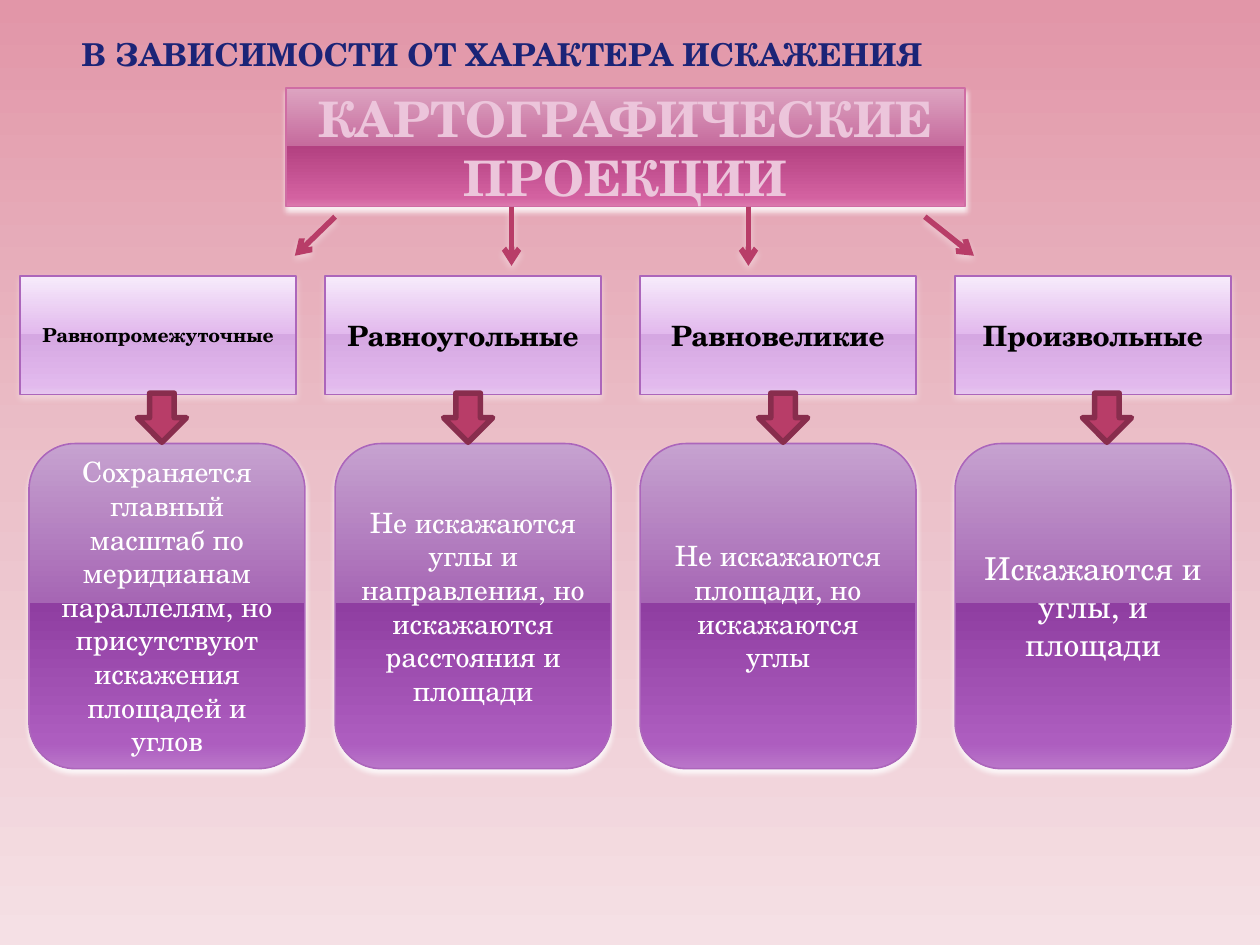
from dataclasses import dataclass

from lxml import etree
from pptx import Presentation
from pptx import util as u
from pptx.dml.color import RGBColor
from pptx.enum import shapes, text
from pptx.oxml import parse_xml
from pptx.oxml.ns import nsdecls, qn


@dataclass(frozen=True)
class Theme:
    """Colours, gradients and type sizes of the slide."""
    font: str = "TeX Gyre Schola"
    navy: str = "1B2477"
    rose: str = "ECC5DB"
    black: str = "000000"
    white: str = "FFFFFF"
    red: str = "B83D68"
    wine: str = "882D4D"
    pink: str = "CF6DA4"
    lilac: str = "AC66BB"
    back: tuple = ("E296A8", "EBC0C9", "F5E0E5")
    head: tuple = ("DDA4C1", "C66B9D", "B34181", "D361A0", "DC79AE")
    pale: tuple = ("F7EBFB", "E2B9ED", "D5A7E2", "E2B9ED", "E6C6EF")
    deep: tuple = ("C6A2D0", "A666B4", "8F3EA1", "AD5DBF", "BA76CA")
    big: int = 28
    large: int = 18
    mid: int = 16
    small: int = 11
    thin: float = 0.9
    thick: float = 3.15
    soft: tuple = (38, 4)
    firm: tuple = (83, 3.1)


class Deck:
    """Draws styled elements on the current slide."""

    def __init__(self, theme):
        self.look = theme
        self.prs = Presentation()
        self.prs.slide_width, self.prs.slide_height = u.Inches(10), u.Inches(7.5)
        self.slide = self.prs.slides.add_slide(self.prs.slide_layouts[5])
        self.blend(self.slide.background.fill, self.slide.element, theme.back, (0, 50, 100))

    def blend(self, fill, root, tints, stops=(0, 49, 49, 92, 100)):
        """Fill from top to bottom with the given tints."""
        fill.gradient()
        fill.gradient_angle = 270
        band = root.xpath(".//a:gsLst")[0]
        for old in list(band):
            band.remove(old)
        for tint, stop in zip(tints, stops):
            part = etree.SubElement(band, qn("a:gs"), pos=str(stop * 1000))
            etree.SubElement(part, qn("a:srgbClr"), val=tint)

    def edge(self, item, tint, width):
        """Set the line colour and width."""
        item.line.color.rgb = RGBColor.from_string(tint)
        item.line.width = u.Pt(width)

    def glow(self, item, alpha, blur):
        """Put a light shadow below the item."""
        item.element.spPr.append(parse_xml(
            f'<a:effectLst {nsdecls("a")}><a:outerShdw blurRad="{u.Pt(blur)}" '
            f'dist="{u.Pt(2)}" dir="5400000" rotWithShape="0">'
            f'<a:srgbClr val="{self.look.white}"><a:alpha val="{alpha * 1000}"/>'
            '</a:srgbClr></a:outerShdw></a:effectLst>'))

    def place(self, item, box):
        """Move and size the item."""
        item.left, item.top, item.width, item.height = map(u.Inches, box)

    def letter(self, item, words, size, tint, bold=True, align=text.PP_ALIGN.CENTER):
        """Set the text and its style."""
        frame = item.text_frame
        frame.text = words
        frame.word_wrap = True
        para = frame.paragraphs[0]
        para.alignment = align
        font = para.font
        font.name, font.size, font.bold = self.look.font, u.Pt(size), bold
        font.color.rgb = RGBColor.from_string(tint)
        return frame

    def title(self, words, box):
        """Format the title placeholder as a banner."""
        item = self.slide.shapes.title
        self.place(item, box)
        self.blend(item.fill, item.element, self.look.head)
        self.edge(item, self.look.pink, self.look.thin)
        self.glow(item, *self.look.firm)
        frame = self.letter(item, words, self.look.big, self.look.rose)
        frame.auto_size = text.MSO_AUTO_SIZE.NONE
        frame.vertical_anchor = text.MSO_ANCHOR.BOTTOM
        frame.margin_left = frame.margin_right = u.Inches(0.05)
        frame.margin_top = frame.margin_bottom = 0

    def label(self, words, box):
        """Add a line of plain text."""
        item = self.slide.shapes.add_textbox(*map(u.Inches, box))
        self.letter(item, words, self.look.large, self.look.navy, align=text.PP_ALIGN.LEFT)

    def card(self, kind, words, box, tints, shade, size, tint, bold):
        """Add a gradient box with centred text."""
        item = self.slide.shapes.add_shape(kind, *map(u.Inches, box))
        self.blend(item.fill, item.element, tints)
        self.edge(item, self.look.lilac, self.look.thin)
        self.glow(item, *shade)
        frame = self.letter(item, words, size, tint, bold)
        frame.vertical_anchor = text.MSO_ANCHOR.MIDDLE

    def link(self, start, end):
        """Add a line with an arrowhead."""
        item = self.slide.shapes.add_connector(
            shapes.MSO_CONNECTOR.STRAIGHT, *map(u.Inches, start + end))
        self.edge(item, self.look.red, self.look.thick)
        etree.SubElement(item.element.spPr.find(qn("a:ln")), qn("a:tailEnd"), type="arrow")
        self.glow(item, *self.look.soft)

    def arrow(self, left, top, side):
        """Add a block arrow pointing down."""
        item = self.slide.shapes.add_shape(
            shapes.MSO_SHAPE.DOWN_ARROW, *map(u.Inches, (left, top, side, side)))
        item.fill.solid()
        item.fill.fore_color.rgb = RGBColor.from_string(self.look.red)
        self.edge(item, self.look.wine, self.look.thick)
        item.shadow.inherit = False


def main():
    """Build and save the slide."""
    look = Theme()
    deck = Deck(look)
    deck.title("КАРТОГРАФИЧЕСКИЕ ПРОЕКЦИИ", (2.27, 0.7, 5.39, 0.94))
    deck.label("В ЗАВИСИМОСТИ ОТ ХАРАКТЕРА ИСКАЖЕНИЯ", (0.55, 0.23, 7.03, 0.4))

    kinds = (
        (0.16, "Равнопромежуточные", look.small),
        (2.58, "Равноугольные", look.mid),
        (5.08, "Равновеликие", look.mid),
        (7.58, "Произвольные", look.mid),
    )
    for left, name, size in kinds:
        deck.card(shapes.MSO_SHAPE.RECTANGLE, name, (left, 2.19, 2.19, 0.94),
                  look.pale, look.soft, size, look.black, True)

    notes = (
        (0.23, "Сохраняется главный масштаб по меридианам параллелям, "
               "но присутствуют искажения площадей и углов", look.mid),
        (2.66, "Не искажаются углы и направления, "
               "но искажаются расстояния и площади", look.mid),
        (5.08, "Не искажаются площади, но искажаются углы", look.mid),
        (7.58, "Искажаются и углы, и площади", look.large),
    )
    for left, words, size in notes:
        deck.card(shapes.MSO_SHAPE.ROUNDED_RECTANGLE, words, (left, 3.52, 2.19, 2.58),
                  look.deep, look.firm, size, look.white, False)

    for start, end in (((2.66, 1.72), (2.34, 2.03)), ((4.06, 1.64), (4.06, 2.11)),
                       ((5.94, 1.64), (5.94, 2.11)), ((7.34, 1.72), (7.73, 2.03))):
        deck.link(start, end)
    for left in (1.09, 3.52, 6.02, 8.59):
        deck.arrow(left, 3.12, 0.39)
    deck.prs.save("out.pptx")


if __name__ == "__main__":
    main()
